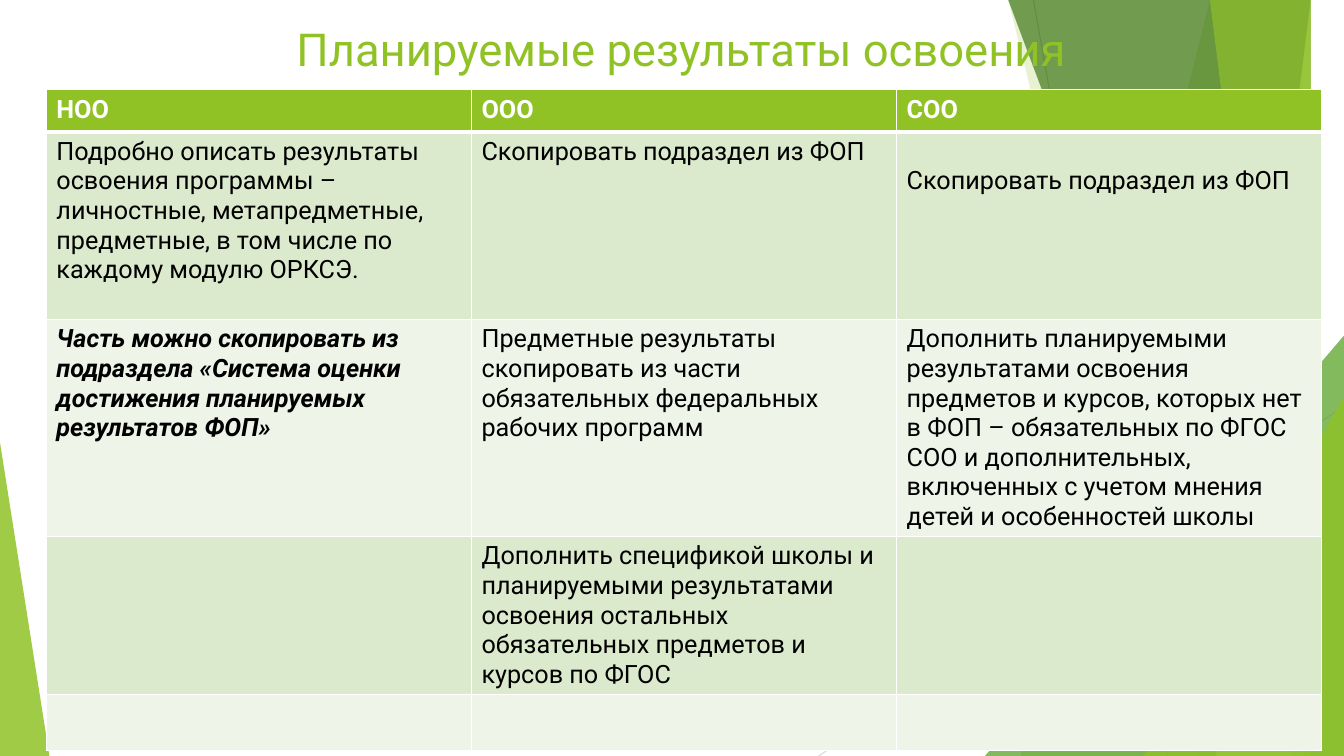
from lxml.etree import SubElement
from pptx import Presentation
from pptx.dml.color import RGBColor
from pptx.enum.shapes import MSO_CONNECTOR, MSO_SHAPE
from pptx.enum.text import MSO_ANCHOR, PP_ALIGN
from pptx.oxml import parse_xml
from pptx.oxml.ns import nsdecls, qn
from pptx.util import Inches, Pt

FONT = "Roboto"
W, H = 13.33, 7.5
COLORS = {
    "green": "90C226", "leaf": "54A021", "forest": "3F7819", "lime": "C0E474",
    "gray": "BFBFBF", "light_gray": "D9D9D9", "white": "FFFFFF", "black": "000000",
    "band_dark": "DBE9CD", "band_light": "EEF4E8",
}
HEADERS = ["НОО", "ООО", "СОО"]
ROWS = [
    ["Подробно описать результаты освоения программы – личностные, метапредметные, "
     "предметные, в том числе по каждому модулю ОРКСЭ.",
     "Скопировать подраздел из ФОП",
     "Скопировать подраздел из ФОП"],
    ["Часть можно скопировать из подраздела «Система оценки достижения планируемых "
     "результатов ФОП»",
     "Предметные результаты скопировать из части обязательных федеральных рабочих программ",
     "Дополнить планируемыми результатами освоения предметов и курсов, которых нет в ФОП "
     "– обязательных по ФГОС СОО и дополнительных, включенных с учетом мнения детей и "
     "особенностей школы"],
    ["",
     "Дополнить спецификой школы и планируемыми результатами освоения остальных "
     "обязательных предметов и курсов по ФГОС",
     ""],
    ["", "", ""],
]
ROW_HEIGHTS = [0.42, 1.86, 2.15, 1.57, 0.55]


def rgb(name):
    return RGBColor.from_string(COLORS[name])


def add_run(p, text, size, color, bold=False, italic=False):
    r = p.add_run()
    r.text = text
    r.font.name, r.font.size = FONT, Pt(size)
    r.font.bold, r.font.italic = bold, italic
    r.font.color.rgb = rgb(color)


def paint(sp, color, opacity):
    sp.shadow.inherit = False
    sp.fill.solid()
    sp.fill.fore_color.rgb = rgb(color)
    sp.line.fill.background()
    clr = sp.element.spPr.find(qn("a:solidFill"))[0]
    SubElement(clr, qn("a:alpha"), val=str(opacity * 1000))


def add_ray(s, start, end, color):
    line = s.shapes.add_connector(
        MSO_CONNECTOR.STRAIGHT, *(Inches(v) for v in start + end))
    line.line.color.rgb = rgb(color)
    line.line.width = Pt(0.75)
    SubElement(line.element.spPr, qn("a:effectLst"))


def add_panel(s, box, top_x, bottom_x, color, opacity):
    left, top, width, height = box
    right, bottom = left + width, top + height
    ff = s.shapes.build_freeform(left + top_x, top, scale=Inches(1))
    ff.add_line_segments(
        [(right, top), (right, bottom), (left + bottom_x, bottom)], close=True)
    paint(ff.convert_to_shape(), color, opacity)


def add_corner(s, box, apex, color, opacity):
    sp = s.shapes.add_shape(MSO_SHAPE.ISOSCELES_TRIANGLE, *(Inches(v) for v in box))
    sp.adjustments[0] = apex
    paint(sp, color, opacity)


def add_decor(s, box):
    left, top, width, height = box
    right, bottom = left + width, top + height
    add_ray(s, (left + 0.48, 0), (left + 1.81, bottom), "gray")
    add_ray(s, (right, 4.03), (8.12, bottom), "light_gray")
    add_panel(s, box, 2.51, 0.27, "green", 30)
    add_panel(s, box, 0.73, 2.06, "green", 20)
    add_corner(s, (left, bottom - 4.17, width, 4.17), 1, "leaf", 72)
    add_panel(s, box, 0.44, 3.14, "forest", 70)
    add_panel(s, box, 3.26, 2.15, "lime", 70)
    add_panel(s, box, 2.19, 3.41, "green", 65)
    add_corner(s, (right - 1.99, bottom - 3.57, 1.99, 3.57), 1, "green", 80)
    add_corner(s, (0, bottom - 3.11, 0.49, 3.11), 0, "green", 85)


def add_title(s, box):
    title = s.shapes.title
    title.left, title.top, title.width, title.height = (Inches(v) for v in box)
    title.element.getparent().append(title.element)
    tf = title.text_frame
    tf.word_wrap = True
    tf.vertical_anchor = MSO_ANCHOR.TOP
    p = tf.paragraphs[0]
    p.alignment = PP_ALIGN.LEFT
    add_run(p, "Планируемые результаты освоения", 32.4, "green")


def set_borders(cell, widths):
    tc_pr = cell._tc.get_or_add_tcPr()
    for i, (side, width) in enumerate(widths.items()):
        tc_pr.insert(i, parse_xml(
            f'<a:ln{side} {nsdecls("a")} w="{Pt(width)}"><a:solidFill>'
            f'<a:srgbClr val="{COLORS["white"]}"/></a:solidFill></a:ln{side}>'))


def add_results_table(s, box):
    left, top, width, height = (Inches(v) for v in box)
    table = s.shapes.add_table(
        len(ROW_HEIGHTS), len(HEADERS), left, top, width, height).table
    for row, row_height in zip(table.rows, ROW_HEIGHTS):
        row.height = Inches(row_height)
    for i, texts in enumerate([HEADERS] + ROWS):
        header = i == 0
        fill = "green" if header else ("band_light", "band_dark")[i % 2]
        for j, text in enumerate(texts):
            cell = table.cell(i, j)
            cell.fill.solid()
            cell.fill.fore_color.rgb = rgb(fill)
            set_borders(cell, {"L": 1, "R": 1, "T": 3 if i == 1 else 1,
                               "B": 3 if header else 1})
            if text:
                emphasis = (i, j) == (2, 0)
                add_run(cell.text_frame.paragraphs[0], text, 18,
                        "white" if header else "black", header or emphasis, emphasis)
    table.cell(1, 2).margin_top = Inches(0.34)


def main():
    prs = Presentation()
    prs.slide_width, prs.slide_height = Inches(W), Inches(H)
    s = prs.slides.add_slide(prs.slide_layouts[5])
    add_decor(s, (9.77, -0.01, 3.56, 7.51))
    add_title(s, (2.84, 0.16, 9.75, 0.6))
    add_results_table(s, (0.46, 0.89, 12.65, sum(ROW_HEIGHTS)))
    prs.save("out.pptx")


if __name__ == "__main__":
    main()
